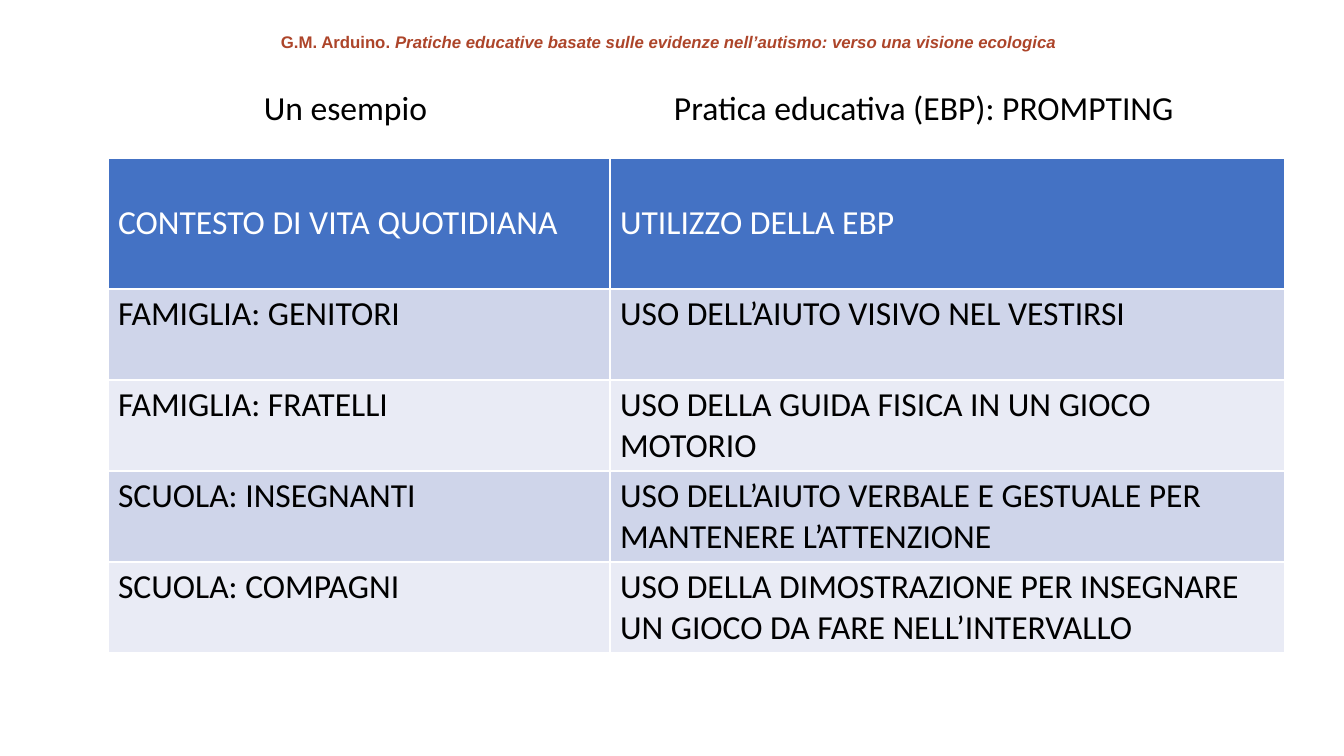
from pptx import Presentation
from pptx.dml.color import RGBColor
from pptx.enum.text import MSO_ANCHOR as Anchor, PP_ALIGN as Align
from pptx.oxml import parse_xml
from pptx.oxml.ns import nsdecls
from pptx.util import Pt

SCALE = 9071.43  # EMU in one px
SLIDE = (1344, 756)

BODY = dict(name="Calibri", size=Pt(24), bold=False)
CREDIT = dict(name="Arial", size=Pt(12), bold=True)
RUST, BLACK, WHITE = "AD452A", "000000", "FFFFFF"
HEAD, BANDS = "4472C4", ("CFD5EA", "E9EBF5")

# box, alignment, font, colour, runs of (text, italic)
LABELS = [
    ((108, 82, 475, 50), Align.CENTER, BODY, BLACK, [("Un esempio", False)]),
    ((664, 82, 575, 50), Align.LEFT, BODY, BLACK,
     [("Pratica educativa (EBP): PROMPTING", False)]),
    ((271, 27, 803, 30), Align.LEFT, CREDIT, RUST,
     [("G.M. Arduino. ", False),
      ("Pratiche educative basate sulle evidenze nell’autismo: "
       "verso una visione ecologica", True)]),
]

ROWS = [
    ("CONTESTO DI VITA QUOTIDIANA", "UTILIZZO DELLA EBP"),
    ("FAMIGLIA: GENITORI", "USO DELL’AIUTO VISIVO NEL VESTIRSI"),
    ("FAMIGLIA: FRATELLI", "USO DELLA GUIDA FISICA IN UN GIOCO MOTORIO"),
    ("SCUOLA: INSEGNANTI",
     "USO DELL’AIUTO VERBALE E GESTUALE PER MANTENERE L’ATTENZIONE"),
    ("SCUOLA: COMPAGNI",
     "USO DELLA DIMOSTRAZIONE PER INSEGNARE UN GIOCO DA FARE NELL’INTERVALLO"),
]
LEFT, TOP = 108, 158
WIDTHS = (502, 675)
HEIGHTS = [131] + [91] * (len(ROWS) - 1)


def emu(*px):
    return [round(n * SCALE) for n in px]


def color(code):
    return RGBColor.from_string(code)


def write(para, text, look, code, italic=False):
    run = para.add_run()
    run.text = text
    for key, val in dict(look, italic=italic).items():
        setattr(run.font, key, val)
    run.font.color.rgb = color(code)


def edge(cell):
    """Draw thin white borders; call before the fill is set."""
    props = cell._tc.get_or_add_tcPr()
    for side in "LRTB":
        props.append(parse_xml(
            f'<a:ln{side} {nsdecls("a")} w="{Pt(1)}"><a:solidFill>'
            f'<a:srgbClr val="{WHITE}"/></a:solidFill></a:ln{side}>'))


def add_label(slide, box, align, look, code, runs):
    frame = slide.shapes.add_textbox(*emu(*box)).text_frame
    frame.word_wrap = True
    para = frame.paragraphs[0]
    para.alignment = align
    for text, italic in runs:
        write(para, text, look, code, italic)


def add_grid(slide):
    box = emu(LEFT, TOP, sum(WIDTHS), sum(HEIGHTS))
    grid = slide.shapes.add_table(len(ROWS), len(WIDTHS), *box).table
    for col, width in zip(grid.columns, emu(*WIDTHS)):
        col.width = width
    for row, height in zip(grid.rows, emu(*HEIGHTS)):
        row.height = height
    for r, texts in enumerate(ROWS):
        for c, text in enumerate(texts):
            cell = grid.cell(r, c)
            edge(cell)
            cell.fill.solid()
            cell.fill.fore_color.rgb = color(BANDS[(r - 1) % 2] if r else HEAD)
            cell.vertical_anchor = Anchor.TOP if r else Anchor.MIDDLE
            write(cell.text_frame.paragraphs[0], text, BODY,
                  BLACK if r else WHITE)


def main():
    deck = Presentation()
    deck.slide_width, deck.slide_height = emu(*SLIDE)
    slide = deck.slides.add_slide(deck.slide_layouts[6])
    for label in LABELS:
        add_label(slide, *label)
    add_grid(slide)
    deck.save("out.pptx")


if __name__ == "__main__":
    main()
